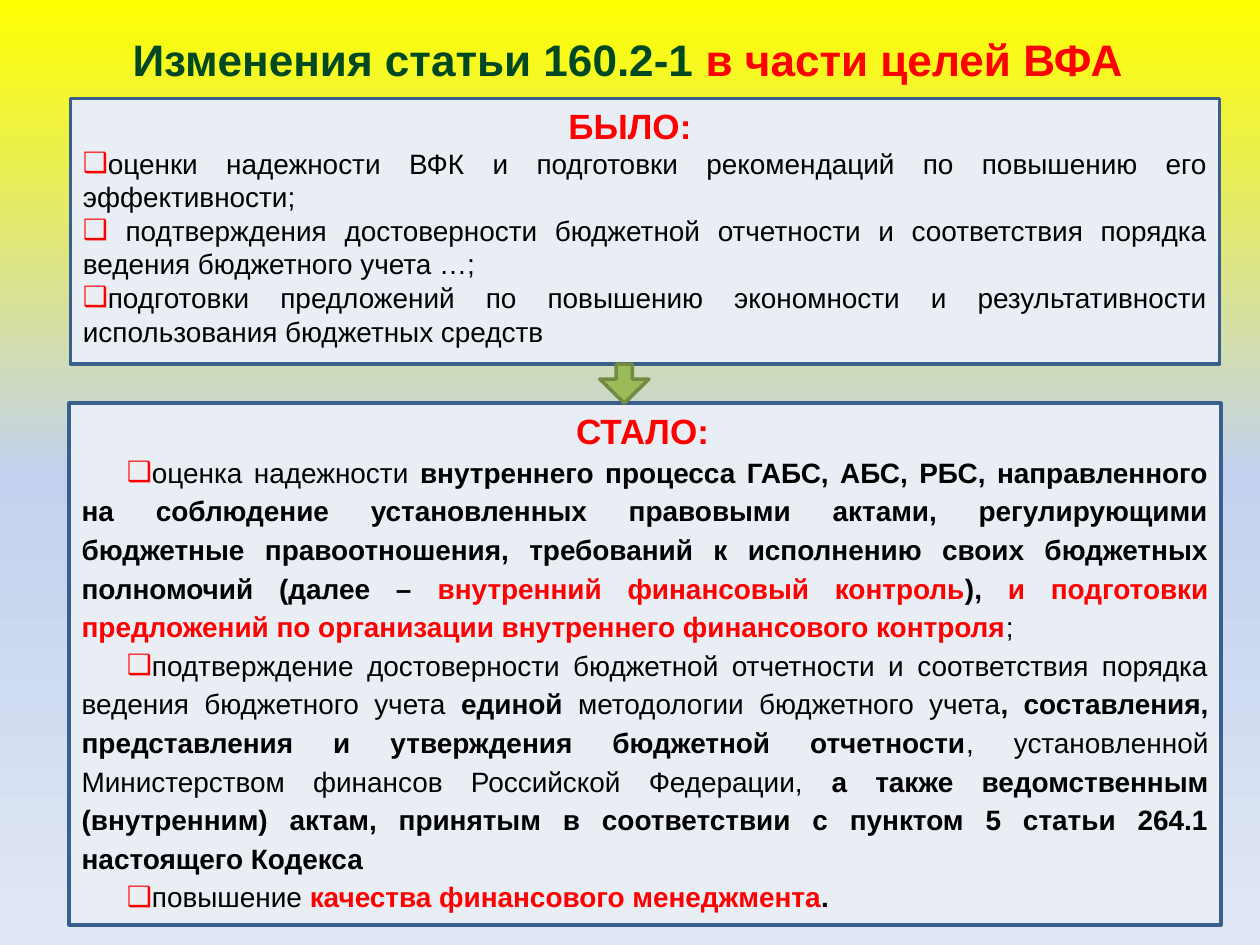
import copy
from dataclasses import dataclass

import pptx
import pptx.dml.color
import pptx.enum.shapes
import pptx.enum.text
import pptx.oxml
import pptx.oxml.ns
import pptx.util

RGB = pptx.dml.color.RGBColor
ALIGN = pptx.enum.text.PP_ALIGN
ANCHOR = pptx.enum.text.MSO_ANCHOR
KIND = pptx.enum.shapes.MSO_SHAPE
Inches, Pt = pptx.util.Inches, pptx.util.Pt

BLACK = RGB(0x00, 0x00, 0x00)
RED = RGB(0xFF, 0x00, 0x00)
GREEN = RGB(0x00, 0x48, 0x21)
PALE = RGB(0xE9, 0xED, 0xF4)
NAVY = RGB(0x3A, 0x5F, 0x8C)
LEAF = RGB(0x9B, 0xBB, 0x59)
MOSS = RGB(0x73, 0x8A, 0x42)
STOPS = [(0, RGB(0xFF, 0xFF, 0x00)), (0.5, RGB(0xC2, 0xD1, 0xED)),
         (1, RGB(0xE1, 0xE8, 0xF5))]

WIDE, HIGH = Inches(10), Inches(7.5)
COLS, ROWS = 100, 75


@dataclass
class Area:
    """A place on the grid, in columns and rows."""
    col: float
    row: float
    cols: float
    rows: float

    def box(self) -> tuple:
        x, y = WIDE / COLS, HIGH / ROWS
        return tuple(round(v) for v in
                     (self.col * x, self.row * y, self.cols * x, self.rows * y))


@dataclass
class Part:
    text: str
    bold: bool = False
    color: RGB = BLACK


@dataclass
class Panel:
    area: Area
    head: str
    label: Area
    items: list
    foot: float
    indent: float = 0
    space: float = 1


def write(para, parts: list, size: float) -> None:
    for part in parts:
        run = para.add_run()
        run.text = part.text
        font = run.font
        font.name, font.size = "Arial", Pt(size)
        font.bold, font.color.rgb = part.bold, part.color


def bullet(para, indent: float) -> None:
    props = para._p.get_or_add_pPr()
    props.set("marL", "0")
    props.set("indent", str(Inches(indent)))
    space = pptx.oxml.ns.nsdecls("a")
    for xml in (f'<a:buClr {space}><a:srgbClr val="{RED}"/></a:buClr>',
                f'<a:buFont {space} typeface="Arial"/>',
                f'<a:buChar {space} char="❑"/>'):
        props.append(pptx.oxml.parse_xml(xml))


def draw(slide, kind, area: Area, fill: RGB, line: RGB):
    shape = slide.shapes.add_shape(kind, *area.box())
    shape.shadow.inherit = False
    shape.fill.solid()
    shape.fill.fore_color.rgb = fill
    shape.line.color.rgb = line
    shape.line.width = Pt(2)
    return shape


def add_panel(slide, panel: Panel) -> None:
    frame = draw(slide, KIND.RECTANGLE, panel.area, PALE, NAVY).text_frame
    frame.word_wrap = True
    frame.vertical_anchor = ANCHOR.BOTTOM
    frame.margin_bottom = Inches(panel.foot)
    for i, parts in enumerate(panel.items):
        para = frame.add_paragraph() if i else frame.paragraphs[0]
        para.alignment = ALIGN.JUSTIFY
        para.line_spacing = panel.space
        bullet(para, panel.indent)
        write(para, parts, 16)

    # Heading over the panel
    frame = slide.shapes.add_textbox(*panel.label.box()).text_frame
    frame.word_wrap = True
    para = frame.paragraphs[0]
    para.alignment = ALIGN.CENTER
    write(para, [Part(panel.head, True, RED)], 20)


def paint(slide) -> None:
    fill = slide.background.fill
    fill.gradient()
    fill.gradient_angle = 270
    last = list(slide.element.iter(pptx.oxml.ns.qn("a:gs")))[-1]
    last.addnext(copy.deepcopy(last))
    for stop, (place, color) in zip(fill.gradient_stops, STOPS):
        stop.position = place
        stop.color.rgb = color


BEFORE = Panel(
    Area(5.6, 7.8, 91.2, 21.1), "БЫЛО:", Area(24.2, 7.8, 51.6, 4.4),
    [[Part("оценки надежности ВФК и подготовки рекомендаций по повышению его "
           "эффективности; ")],
     [Part(" подтверждения достоверности бюджетной отчетности и соответствия "
           "порядка ведения бюджетного учета …; ")],
     [Part("подготовки предложений по повышению экономности и результативности "
           "использования бюджетных средств")]],
    foot=0.13)

AFTER = Panel(
    Area(5.5, 32, 91.4, 41.4), "СТАЛО:", Area(28.1, 32, 45.8, 4.4),
    [[Part("оценка надежности"),
      Part(" внутреннего процесса ГАБС, АБС, РБС, направленного на соблюдение "
           "установленных правовыми актами, регулирующими бюджетные "
           "правоотношения, требований к исполнению своих бюджетных полномочий "
           "(далее – ", True),
      Part("внутренний финансовый контроль", True, RED),
      Part("), ", True),
      Part("и подготовки предложений по организации внутреннего финансового "
           "контроля", True, RED),
      Part("; ")],
     [Part("подтверждение достоверности бюджетной отчетности и соответствия "
           "порядка ведения бюджетного учета "),
      Part("единой ", True),
      Part("методологии бюджетного учета"),
      Part(", составления, представления и утверждения бюджетной отчетности",
           True),
      Part(", установленной Министерством финансов Российской Федерации, "),
      Part("а также ведомственным (внутренним) актам, принятым в соответствии "
           "с пунктом 5 статьи 264.1 настоящего Кодекса", True)],
     [Part("повышение "),
      Part("качества финансового менеджмента", True, RED),
      Part(".", True)]],
    foot=0.09, indent=0.36, space=1.15)


def main() -> None:
    deck = pptx.Presentation()
    deck.slide_width, deck.slide_height = WIDE, HIGH
    slide = deck.slides.add_slide(deck.slide_layouts[5])
    paint(slide)

    # Title
    title = slide.shapes.title
    title.left, title.top, title.width, title.height = Area(7.8, 2.3, 85, 4.7).box()
    title.text_frame.vertical_anchor = ANCHOR.MIDDLE
    para = title.text_frame.paragraphs[0]
    para.alignment = ALIGN.CENTER
    write(para, [Part("Изменения статьи 160.2-1 ", True, GREEN),
                 Part("в части целей ВФА ", True, RED)], 25.2)

    # Panels and the arrow between them
    for panel in (BEFORE, AFTER):
        add_panel(slide, panel)
    arrow = draw(slide, KIND.LEFT_ARROW, Area(48, 28.5, 3.1, 3.9), LEAF, MOSS)
    arrow.rotation = 270
    arrow.adjustments[0], arrow.adjustments[1] = 0.33, 0.62

    deck.save("out.pptx")


if __name__ == "__main__":
    main()
